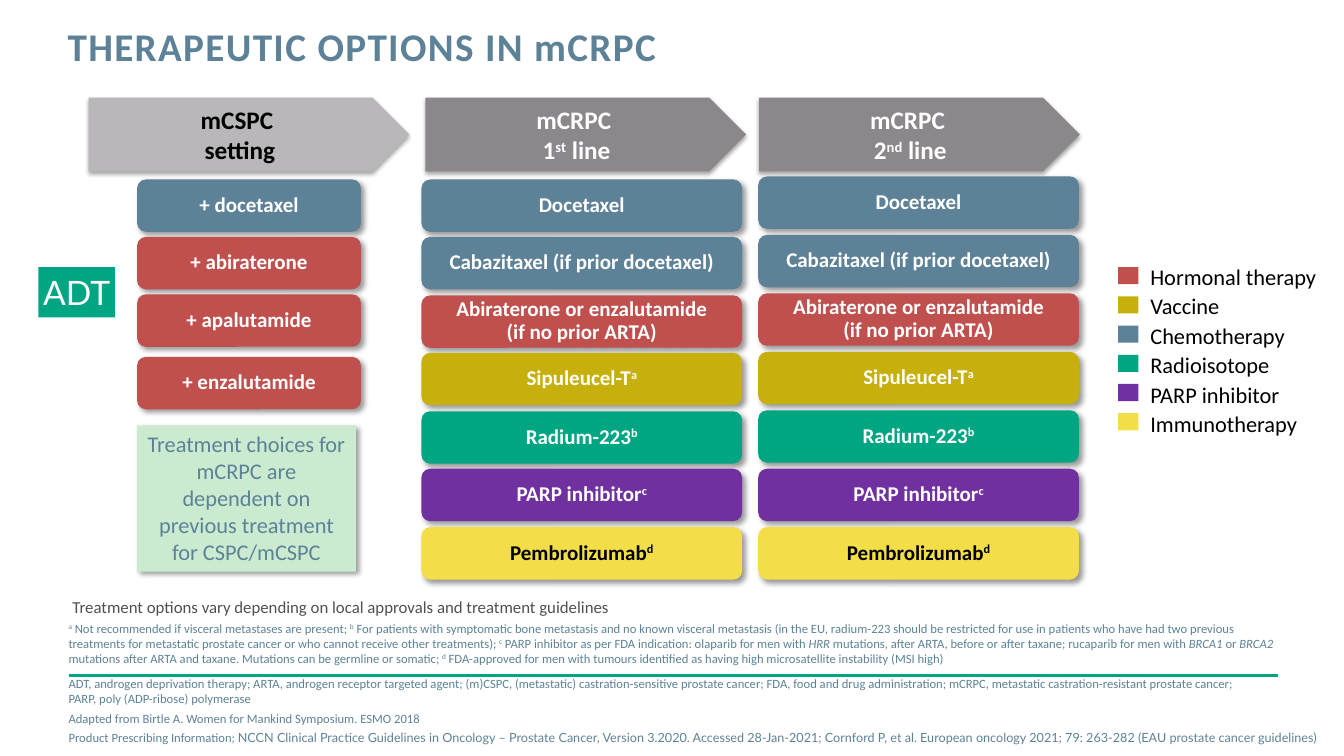
import copy

import pptx
import pptx.dml.color
import pptx.enum.shapes
import pptx.enum.text
import pptx.oxml
import pptx.oxml.ns
import pptx.util

RGB = pptx.dml.color.RGBColor
SHAPE = pptx.enum.shapes.MSO_SHAPE
ALIGN = pptx.enum.text.PP_ALIGN
ANCHOR = pptx.enum.text.MSO_ANCHOR

EMU_PER_PX = 9144

SLATE = RGB(0x5D, 0x82, 0x98)
RED = RGB(0xC0, 0x50, 0x4D)
OLIVE = RGB(0xC7, 0xAF, 0x0C)
GREEN = RGB(0x00, 0xA5, 0x82)
PURPLE = RGB(0x70, 0x30, 0xA0)
YELLOW = RGB(0xF4, 0xDE, 0x48)
MINT = RGB(0xCB, 0xEB, 0xD0)
LIGHT_GREY = RGB(0xB9, 0xB7, 0xB9)
MID_GREY = RGB(0x8B, 0x87, 0x8B)
DARK_GREY = RGB(0x50, 0x50, 0x50)
BLACK = RGB(0x00, 0x00, 0x00)
WHITE = RGB(0xFF, 0xFF, 0xFF)

CARD_SHADOW = (40, 4, 3, 45)
ARROW_SHADOW = (35, 3.1, 1.8, 90)

STAGES = [
    (88, LIGHT_GREY, BLACK, [("mCSPC \vsetting", "")]),
    (422, MID_GREY, WHITE, [("mCRPC \v1", ""), ("st", "super"), (" line", "")]),
    (753, MID_GREY, WHITE, [("mCRPC \v2", ""), ("nd", "super"), (" line", "")]),
]
MCSPC_OPTIONS = [
    (178, "+ docetaxel", SLATE),
    (235, "+ abiraterone", RED),
    (292, "+ apalutamide", RED),
    (354, "+ enzalutamide", RED),
]
MCRPC_OPTIONS = [
    ([("Docetaxel", "")], SLATE),
    ([("Cabazitaxel (if prior docetaxel)", "")], SLATE),
    ([("Abiraterone or enzalutamide\v(if no prior ARTA)", "")], RED),
    ([("Sipuleucel-T", ""), ("a", "super")], OLIVE),
    ([("Radium-223", ""), ("b", "super")], GREEN),
    ([("PARP inhibitor", ""), ("c", "super")], PURPLE),
    ([("Pembrolizumab", ""), ("d", "super")], YELLOW),
]
LEGEND = [
    ("Hormonal therapy", RED),
    ("Vaccine", OLIVE),
    ("Chemotherapy", SLATE),
    ("Radioisotope", GREEN),
    ("PARP inhibitor", PURPLE),
    ("Immunotherapy", YELLOW),
]
FOOTNOTE = [
    ("a", "super"),
    (" Not recommended if visceral metastases are present; ", ""),
    ("b", "super"),
    (" For patients with symptomatic bone metastasis and no known visceral metastasis "
     "(in the EU, radium-223 should be restricted for use in patients who have had two "
     "previous treatments for metastatic prostate cancer or who cannot receive other "
     "treatments); ", ""),
    ("c", "super"),
    (" PARP inhibitor as per FDA indication: olaparib for men with ", ""),
    ("HRR", "italic"),
    (" mutations, after ARTA, before or after taxane; rucaparib for men with ", ""),
    ("BRCA1 ", "italic"),
    ("or ", ""),
    ("BRCA2", "italic"),
    (" mutations after ARTA and taxane. Mutations can be germline or somatic; ", ""),
    ("d", "super"),
    (" FDA-approved for men with tumours identified as having high microsatellite "
     "instability (MSI high)", ""),
]
REFERENCES = [
    [("ADT, androgen deprivation therapy; ARTA, androgen receptor targeted agent; (m)CSPC, "
      "(metastatic) castration-sensitive prostate cancer; FDA, food and drug administration; "
      "mCRPC, metastatic castration-resistant prostate cancer; "
      "\vPARP, poly (ADP-ribose) polymerase", "")],
    [("Adapted from Birtle A. Women for Mankind Symposium. ESMO 2018", "")],
    [("Product Prescribing Information; ", ""),
     ("NCCN Clinical Practice Guidelines in Oncology – Prostate Cancer, Version 3.2020. "
      "Accessed 28-Jan-2021; Cornford P, et al. European oncology 2021; 79: 263-282 "
      "(EAU prostate cancer guidelines)", "lato")],
]


def px(length):
    return pptx.util.Emu(length * EMU_PER_PX)


def write(paragraph, pieces, size, color, bold=False, align=ALIGN.LEFT):
    paragraph.alignment = align
    paragraph.text = pieces[0][0]
    styled = [(run, pieces[0][1]) for run in paragraph.runs]
    for words, style in pieces[1:]:
        run = paragraph.add_run()
        run.text = words
        styled.append((run, style))
    for run, style in styled:
        run.font.name = "Lato" if style == "lato" else "Calibri"
        run.font.size = pptx.util.Pt(size)
        run.font.bold = bold
        run.font.italic = style == "italic"
        run.font.color.rgb = color
        if style == "super":
            run.font._element.set("baseline", "30000")
    for line_break in paragraph._p.findall(pptx.oxml.ns.qn("a:br")):
        line_break.append(copy.deepcopy(styled[0][0].font._element))


def set_frame(frame, wrap=True, anchor=ANCHOR.TOP, inset=True):
    frame.word_wrap = wrap
    frame.auto_size = pptx.enum.text.MSO_AUTO_SIZE.NONE
    frame.vertical_anchor = anchor
    if not inset:
        frame.margin_left = frame.margin_right = frame.margin_top = frame.margin_bottom = 0
    return frame


def add_shadow(shape, opacity, blur, distance, angle):
    effects = pptx.oxml.parse_xml(
        f'<a:effectLst {pptx.oxml.ns.nsdecls("a")}>'
        f'<a:outerShdw blurRad="{pptx.util.Pt(blur)}" dist="{pptx.util.Pt(distance)}" '
        f'dir="{angle * 60000}" rotWithShape="0"><a:srgbClr val="000000">'
        f'<a:alpha val="{opacity * 1000}"/></a:srgbClr></a:outerShdw></a:effectLst>')
    properties = shape._element.spPr
    properties.remove(properties.find(pptx.oxml.ns.qn("a:effectLst")))
    properties.append(effects)


def add_block(slide, kind, box, fill, shadow=None):
    block = slide.shapes.add_shape(kind, *map(px, box))
    block.shadow.inherit = False
    block.fill.solid()
    block.fill.fore_color.rgb = fill
    block.line.fill.background()
    if shadow:
        add_shadow(block, *shadow)
    return block


def add_stage(slide, left, fill, color, pieces):
    stage = add_block(slide, SHAPE.PENTAGON, (left, 97, 318, 73), fill, ARROW_SHADOW)
    heading = set_frame(stage.text_frame, anchor=ANCHOR.MIDDLE).paragraphs[0]
    write(heading, pieces, 18, color, True, ALIGN.CENTER)


def add_option(slide, left, top, width, pieces, fill):
    card = add_block(slide, SHAPE.ROUNDED_RECTANGLE, (left, top, width, 52), fill, CARD_SHADOW)
    label = set_frame(card.text_frame, anchor=ANCHOR.MIDDLE).paragraphs[0]
    color = BLACK if fill == YELLOW else WHITE
    write(label, pieces, 15, color, True, ALIGN.CENTER)
    label.line_spacing = 0.9


def add_text(slide, box, **frame_options):
    return set_frame(slide.shapes.add_textbox(*map(px, box)).text_frame, **frame_options)


def place(placeholder, left, top, width, height):
    placeholder.left, placeholder.top = px(left), px(top)
    placeholder.width, placeholder.height = px(width), px(height)


def add_title(slide):
    title = slide.shapes.title
    place(title, 67, 27, 956, 88)
    heading = set_frame(title.text_frame, inset=False).paragraphs[0]
    write(heading, [("THERAPEUTIC OPTIONS IN mCRPC", "")], 28, SLATE, True)
    heading.line_spacing = pptx.util.Pt(30)
    heading.runs[0].font._element.set("spc", "100")


def add_references(slide):
    references = slide.placeholders[1]
    place(references, 68, 685, 1255, 40)
    frame = set_frame(references.text_frame, anchor=ANCHOR.MIDDLE, inset=False)
    for index, pieces in enumerate(REFERENCES):
        entry = frame.add_paragraph() if index else frame.paragraphs[0]
        properties = entry._p.get_or_add_pPr()
        properties.set("marL", "0")
        properties.set("indent", "0")
        properties.append(pptx.oxml.parse_xml(f'<a:buNone {pptx.oxml.ns.nsdecls("a")}/>'))
        write(entry, pieces, 9, SLATE)
        entry.space_before = pptx.util.Pt(3 if index else 0)


def add_legend(slide):
    frame = add_text(slide, (1141, 258, 167, 176), wrap=False, inset=False)
    for index, (therapy, fill) in enumerate(LEGEND):
        add_block(slide, SHAPE.RECTANGLE, (1109, 265 + 29 * index, 20, 17), fill)
        entry = frame.add_paragraph() if index else frame.paragraphs[0]
        write(entry, [(therapy, "")], 16, BLACK)
        entry.line_spacing = 1.1


def add_divider(slide):
    divider = slide.shapes.add_connector(
        pptx.enum.shapes.MSO_CONNECTOR.STRAIGHT, px(68), px(670), px(1268), px(670))
    divider.line.color.rgb = GREEN
    divider.line.width = pptx.util.Pt(2)
    divider._element.spPr.append(
        pptx.oxml.parse_xml(f'<a:effectLst {pptx.oxml.ns.nsdecls("a")}/>'))


def main():
    deck = pptx.Presentation()
    deck.slide_width, deck.slide_height = px(1333), px(750)
    slide = deck.slides.add_slide(deck.slide_layouts[1])

    add_divider(slide)
    add_title(slide)
    add_references(slide)
    footnote = add_text(slide, (68, 607, 1207, 62), anchor=ANCHOR.MIDDLE, inset=False)
    write(footnote.paragraphs[0], FOOTNOTE, 9, SLATE)
    add_legend(slide)

    for stage in STAGES:
        add_stage(slide, *stage)
    for top, therapy, fill in MCSPC_OPTIONS:
        add_option(slide, 136, top, 222, [(therapy, "")], fill)
    for row, (pieces, fill) in enumerate(MCRPC_OPTIONS):
        add_option(slide, 418, 178 + row * 115 // 2, 318, pieces, fill)
        add_option(slide, 752, 175 + row * 58, 318, pieces, fill)

    adt = add_block(slide, SHAPE.RECTANGLE, (38, 265, 76, 50), GREEN)
    adt_frame = set_frame(adt.text_frame, wrap=False, anchor=ANCHOR.MIDDLE, inset=False)
    write(adt_frame.paragraphs[0], [("ADT", "lato")], 24, WHITE, align=ALIGN.CENTER)
    choices = add_block(slide, SHAPE.RECTANGLE, (136, 422, 217, 145), MINT, CARD_SHADOW)
    write(set_frame(choices.text_frame).paragraphs[0],
          [("Treatment choices for mCRPC are dependent on previous treatment for CSPC/mCSPC", "")],
          16, SLATE, align=ALIGN.CENTER)
    approvals = add_text(slide, (62, 587, 565, 30), wrap=False)
    write(approvals.paragraphs[0],
          [("Treatment options vary depending on local approvals and treatment guidelines", "")],
          12, DARK_GREY)
    deck.save("out.pptx")


if __name__ == "__main__":
    main()
